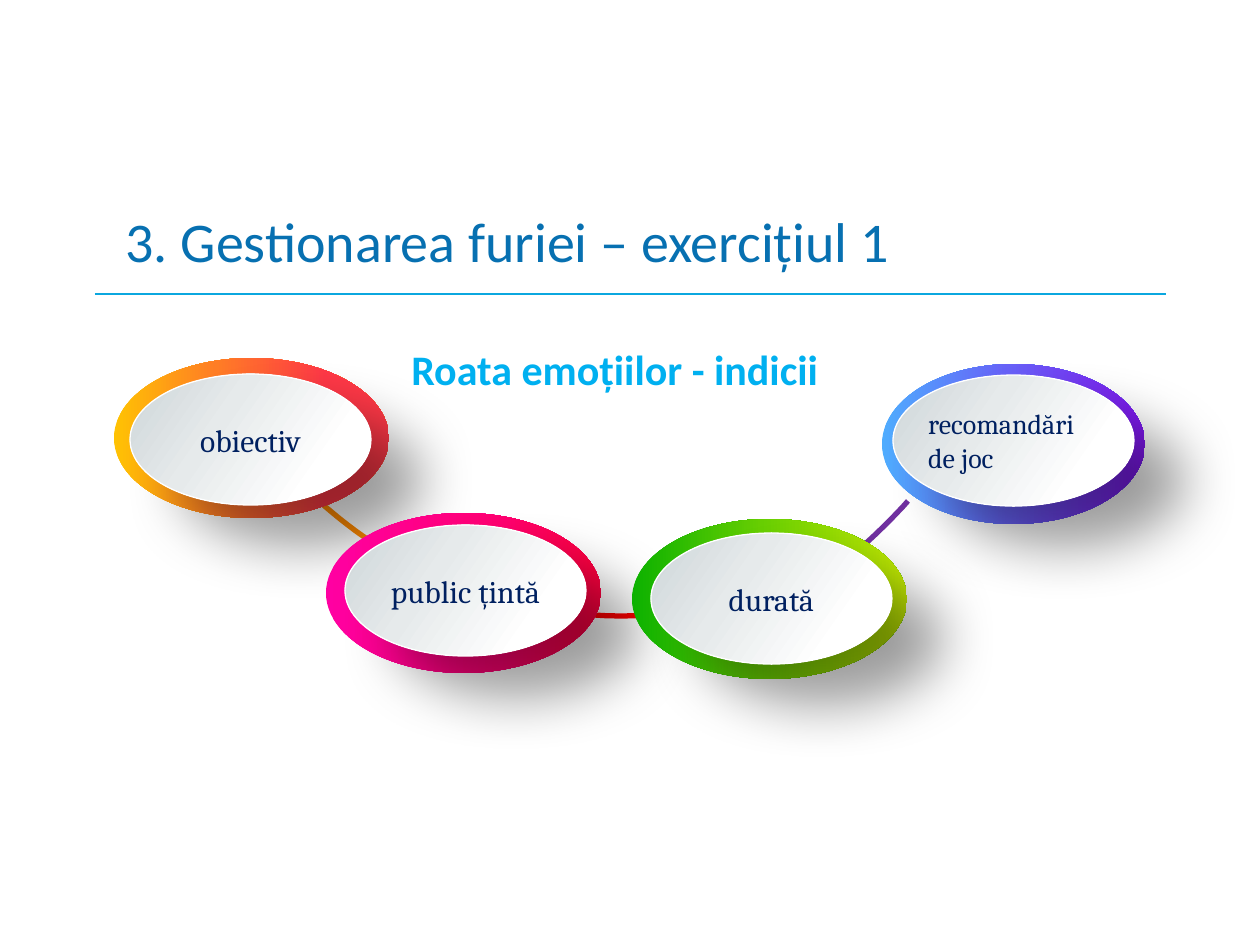
from lxml.etree import SubElement
from pptx import Presentation
from pptx.dml.color import RGBColor
from pptx.enum.shapes import MSO_CONNECTOR as CONN, MSO_SHAPE as SHAPE
from pptx.enum.text import MSO_ANCHOR as ANCHOR, PP_ALIGN as ALIGN
from pptx.oxml import parse_xml
from pptx.oxml.ns import nsdecls, qn
from pptx.util import Emu, Pt

PX = 914400 / 126
NAVY, WHITE = "002060", "FFFFFF"
SILVER = [(0, "CDD5D8"), (37, "E6EAEB"), (77, WHITE), (100, WHITE)]


def px(*values):
    return [Emu(round(v * PX)) for v in values]


def write(sp, text, size, font, color, bold=False, align=ALIGN.LEFT,
          anchor=ANCHOR.MIDDLE, margin=None):
    tf = sp.text_frame
    tf.word_wrap = True
    tf.vertical_anchor = anchor
    if margin is not None:
        tf.margin_left = tf.margin_right = margin
        tf.margin_top = tf.margin_bottom = margin
    p = tf.paragraphs[0]
    p.alignment = align
    r = p.add_run()
    r.text = text
    r.font.size, r.font.name, r.font.bold = Pt(size), font, bold
    r.font.color.rgb = RGBColor.from_string(color)
    return p


prs = Presentation()
prs.slide_width, prs.slide_height = px(1260, 945)
slide = prs.slides.add_slide(prs.slide_layouts[5])
shapes = slide.shapes

# Title and rule
title = shapes.title
title.left, title.top, title.width, title.height = px(113, 193, 1071, 94)
write(title, "3. Gestionarea furiei – exercițiul 1", 32, "Calibri", "0770B1")
rule = shapes.add_connector(CONN.STRAIGHT, *px(95, 294, 1166, 294))
rule.line.color.rgb = RGBColor.from_string("0BA7DF")
rule.line.width = Pt(0.75)
SubElement(rule._element.spPr, qn("a:effectLst"))

# Arcs between the ovals: start, two controls, end of each cubic
arcs = {
    "purple": ("7030A0", [[(908, 501), (885, 527), (863, 546), (843, 564)],
                          [(843, 564), (819, 580), (795, 592), (770, 601)]]),
    "red": ("FF0000", [[(566, 612), (593, 616), (621, 617), (649, 615)],
                       [(649, 615), (663, 614), (676, 613), (690, 611)]]),
    "orange": ("FF8A00", [[(311, 494), (338, 519), (370, 543), (406, 564)]]),
}
# Ovals: arcs drawn below it, text, size, align, rim box, face corner, rim colours
ovals = [
    (["purple"], "recomandări de joc", 16, ALIGN.LEFT, (882, 364, 263, 160), (893, 375),
     [(0, "4FACFE"), (48, "6761F7"), (100, "8016EF")]),
    (["red", "orange"], "obiectiv", 18, ALIGN.CENTER, (114, 358, 275, 160), (130, 374),
     [(0, "FFC203"), (37, "FF7D25"), (77, "FF3847"), (100, "FF3847")]),
    ([], "public țintă", 18, ALIGN.CENTER, (326, 513, 275, 160), (345, 525),
     [(0, "FF00A2"), (63, "FF0071"), (98, "FF0040"), (100, "FF0040")]),
    ([], "durată", 18, ALIGN.CENTER, (632, 519, 275, 160), (651, 533),
     [(0, "0CB100"), (47, "67CE02"), (99, "C3EA03")]),
]
STEPS = 12
for arc_names, text, size, align, rim_box, (x, y), rim_stops in ovals:
    for name in arc_names:
        color, cubics = arcs[name]
        points = []
        for a, b, c, d in cubics:
            for t in [i / STEPS for i in range(STEPS + 1)]:
                u = 1 - t
                points.append([u**3 * a[k] + 3 * u * u * t * b[k] + 3 * u * t * t * c[k]
                               + t**3 * d[k] for k in (0, 1)])
        # Tenths of a pixel keep the sampled curve smooth
        points = [(round(10 * i), round(10 * j)) for i, j in points]
        builder = shapes.build_freeform(*points[0], scale=PX / 10)
        builder.add_line_segments(points[1:], close=False)
        arc = builder.convert_to_shape()
        arc.fill.background()
        arc.line.color.rgb = RGBColor.from_string(color)
        arc.line.width = Pt(3)
        arc.shadow.inherit = False

    for box, stops, angle in ((rim_box, rim_stops, 0), ((x, y, 241, 131), SILVER, 35)):
        sp = shapes.add_shape(SHAPE.OVAL, *px(*box))
        gs = "".join(f'<a:gs pos="{pos * 1000}"><a:srgbClr val="{c}"/></a:gs>'
                     for pos, c in stops)
        sp._element.spPr.append(parse_xml(
            f'<a:gradFill {nsdecls("a")} rotWithShape="1"><a:gsLst>{gs}</a:gsLst>'
            f'<a:lin ang="{angle * 60000}" scaled="0"/></a:gradFill>'))
        sp.line.fill.background()
        sp.shadow.inherit = False

    # The face, drawn last, carries the line, the shadow and the text
    sp.line.color.rgb = RGBColor.from_string(WHITE)
    sp.line.width = Pt(0.75)
    sp._element.spPr.find(qn("a:effectLst")).append(parse_xml(
        f'<a:outerShdw {nsdecls("a")} blurRad="{Pt(33)}" dist="{Pt(36.7)}" '
        f'dir="{39 * 60000}" algn="ctr" rotWithShape="0">'
        '<a:srgbClr val="000000"><a:alpha val="38000"/></a:srgbClr></a:outerShdw>'))
    write(sp, text, size, "Cambria", NAVY, align=align, margin=0)

# Subtitle
sub = shapes.add_textbox(*px(399, 330, 614, 72))
p = write(sub, "Roata emoțiilor - indicii", 24, "Calibri", "00B0F0", bold=True,
          anchor=ANCHOR.TOP)
p.line_spacing, p.space_after = 1.15, Pt(6)

prs.save("out.pptx")
